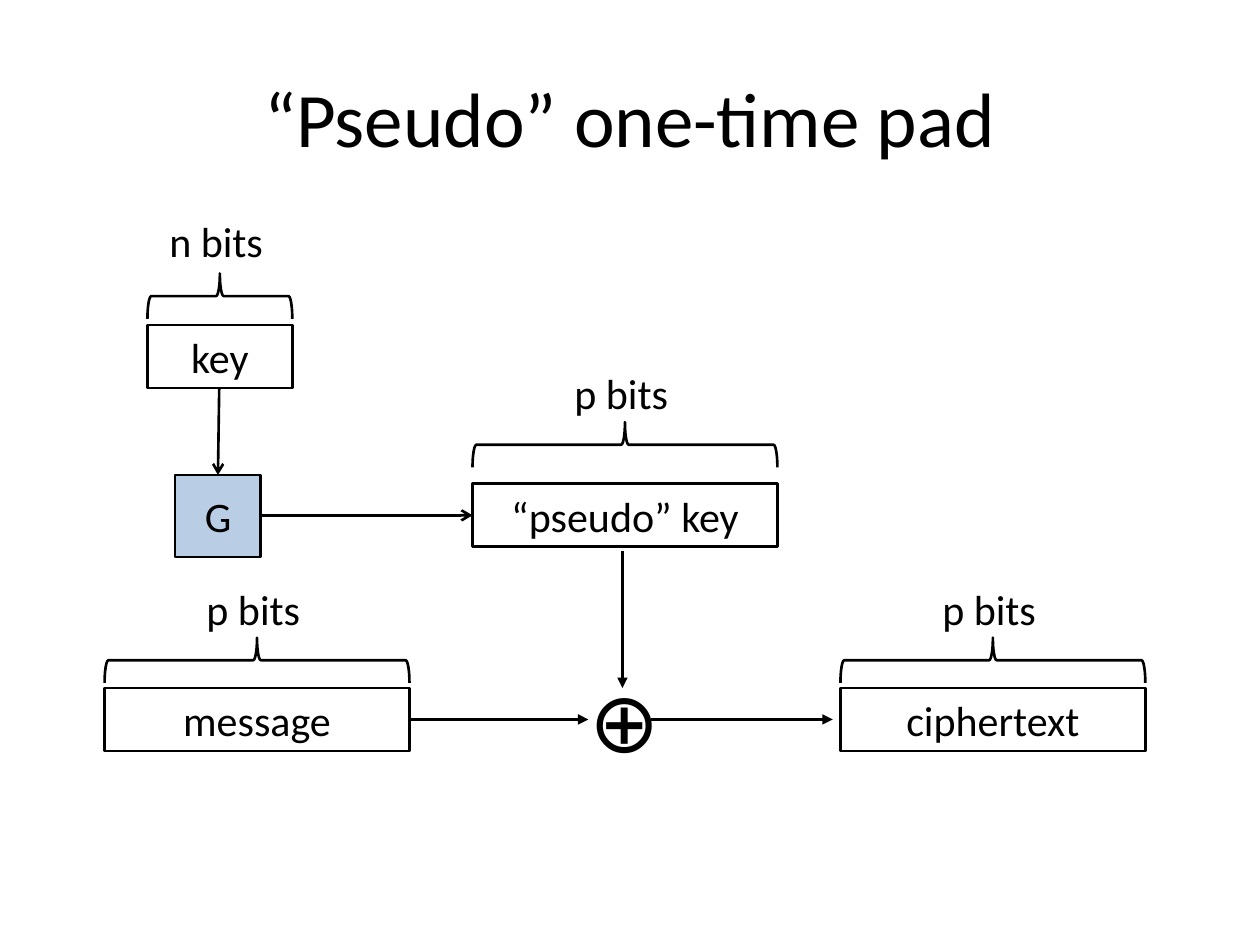
import pptx
import pptx.util
import pptx.dml.color
import pptx.enum.shapes
import pptx.enum.text
import pptx.oxml
import pptx.oxml.ns

Inches, Pt = pptx.util.Inches, pptx.util.Pt
RGBColor = pptx.dml.color.RGBColor
MSO_SHAPE = pptx.enum.shapes.MSO_SHAPE
ALIGN, ANCHOR = pptx.enum.text.PP_ALIGN, pptx.enum.text.MSO_ANCHOR

# Content
BLACK = RGBColor(0x00, 0x00, 0x00)
WHITE = RGBColor(0xFF, 0xFF, 0xFF)
BLUE = RGBColor(0xB9, 0xCD, 0xE5)
FONT = "Calibri"
TITLE = "“Pseudo” one-time pad"
BOX_H, BRACE_H = 0.5, 0.36

# text, left, top, width, length label, label rise, brace rise (above box top)
BLOCKS = [
    ("“pseudo” key", 3.75, 3.84, 2.42, "p bits", 0.97, 0.31),
    ("key", 1.17, 2.58, 1.15, "n bits", 0.92, 0.23),
    ("ciphertext", 6.67, 5.46, 2.42, "p bits", 0.88, 0.22),
    ("message", 0.83, 5.46, 2.42, "p bits", 0.88, 0.22),
]
# start, end, arrowhead
ARROWS = [
    ((3.25, 5.71), (4.67, 5.71), "triangle"),   # message to XOR
    ((4.94, 4.37), (4.94, 5.46), "triangle"),   # pseudo key to XOR
    ((5.17, 5.71), (6.61, 5.71), "triangle"),   # XOR to ciphertext
    ((2.07, 4.09), (3.75, 4.09), "arrow"),      # G to pseudo key
    ((1.74, 3.08), (1.73, 3.77), "arrow"),      # key to G
]


def write(tf, text, size=24, align=ALIGN.CENTER, anchor=ANCHOR.MIDDLE, wrap=True):
    tf.word_wrap = wrap
    tf.vertical_anchor = anchor
    p = tf.paragraphs[0]
    p.alignment = align
    r = p.add_run()
    r.text = text
    r.font.name, r.font.size, r.font.color.rgb = FONT, Pt(size), BLACK


def add_outline(s, kind, x, y, w, h, fill=None):
    sp = s.shapes.add_shape(kind, Inches(x), Inches(y), Inches(w), Inches(h))
    sp.shadow.inherit = False
    if fill is None:
        sp.fill.background()
    else:
        sp.fill.solid()
        sp.fill.fore_color.rgb = fill
    sp.line.color.rgb, sp.line.width = BLACK, Pt(1.5)
    return sp


def add_label(s, text, x, y, w, h, size=24):
    sp = s.shapes.add_textbox(Inches(x), Inches(y), Inches(w), Inches(h))
    write(sp.text_frame, text, size=size, align=ALIGN.LEFT, anchor=ANCHOR.TOP, wrap=False)


def add_block(s, text, x, y, w, label, label_rise, brace_rise):
    box = add_outline(s, MSO_SHAPE.RECTANGLE, x, y, w, BOX_H, WHITE)
    write(box.text_frame, text)
    center = x + w / 2
    add_label(s, label, center - 0.5, y - label_rise, 0.95, 0.5)
    # A right brace turned upwards: its height spans the box width
    brace = add_outline(s, MSO_SHAPE.RIGHT_BRACE, center - BRACE_H / 2,
                        y - brace_rise - w / 2, BRACE_H, w)
    brace.rotation = 270


def add_arrow(s, start, end, head):
    c = s.shapes.add_connector(pptx.enum.shapes.MSO_CONNECTOR.STRAIGHT,
                               *(Inches(v) for v in start + end))
    c.line.color.rgb, c.line.width = BLACK, Pt(1.5)
    tail = pptx.oxml.parse_xml(
        f'<a:tailEnd {pptx.oxml.ns.nsdecls("a")} type="{head}"/>')
    c.line._get_or_add_ln().append(tail)
    c._element.spPr.append(
        pptx.oxml.parse_xml(f'<a:effectLst {pptx.oxml.ns.nsdecls("a")}/>'))


def main():
    prs = pptx.Presentation()
    prs.slide_width, prs.slide_height = Inches(10), Inches(7.5)
    s = prs.slides.add_slide(prs.slide_layouts[5])

    # Title
    title = s.shapes.title
    title.left, title.top = Inches(0.5), Inches(0.3)
    title.width, title.height = Inches(9), Inches(1.25)
    write(title.text_frame, TITLE, size=44)

    # Blocks with their bit lengths
    for block in BLOCKS:
        add_block(s, *block)

    # Generator and XOR
    generator = add_outline(s, MSO_SHAPE.RECTANGLE, 1.39, 3.77, 0.68, 0.65, BLUE)
    write(generator.text_frame, "G")
    add_label(s, "⊕", 4.58, 5.26, 0.72, 0.91, size=48)

    # Data flow
    for arrow in ARROWS:
        add_arrow(s, *arrow)

    prs.save("out.pptx")


if __name__ == "__main__":
    main()
